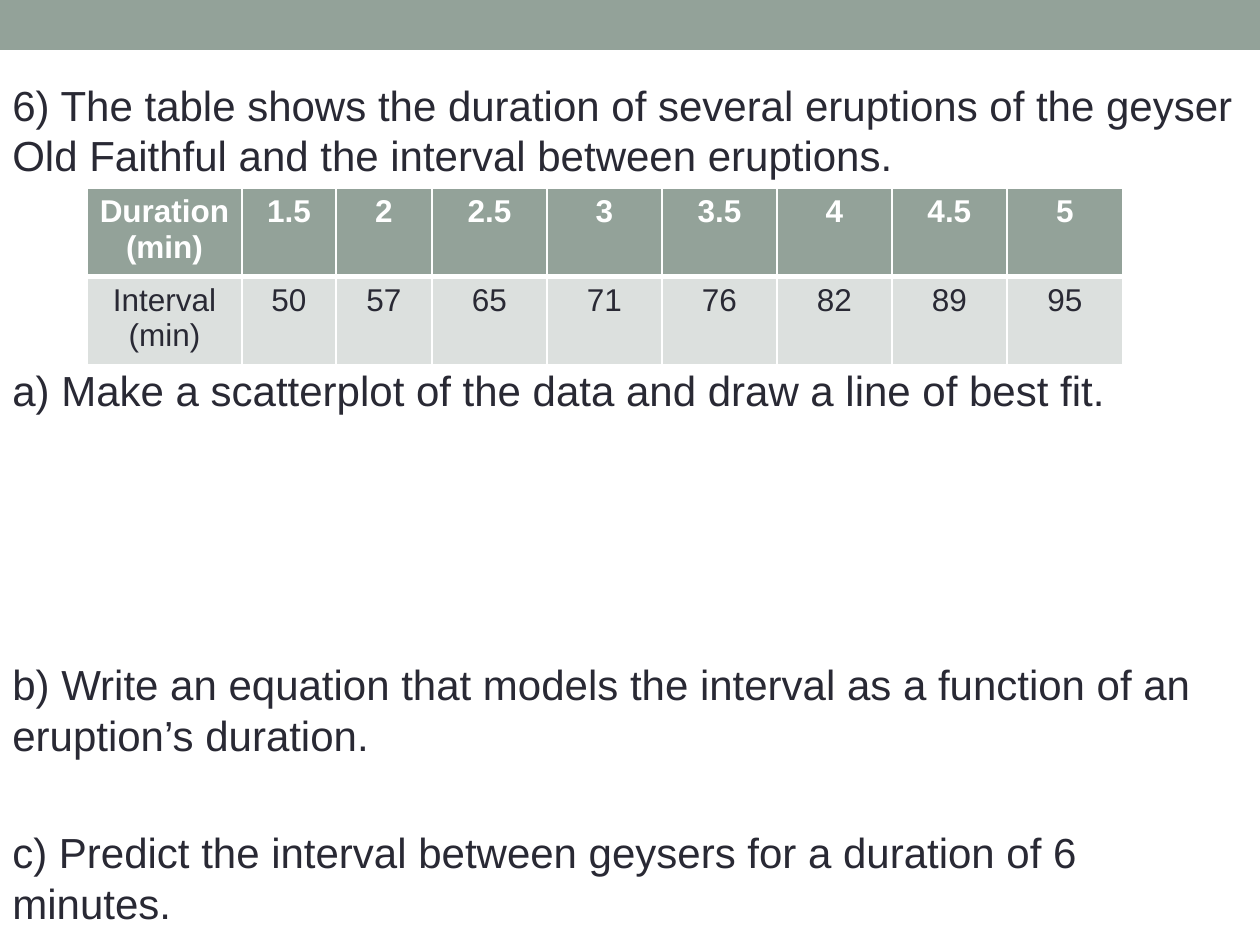
import pptx
import pptx.util
import pptx.dml.color
import pptx.enum.shapes
import pptx.enum.text
import pptx.oxml
import pptx.oxml.ns

SCALE = 914400 // 126
SAGE, PALE, INK, WHITE = "93A299", "DCE0DE", "292934", "FFFFFF"
MID = pptx.enum.text.PP_ALIGN.CENTER

TASKS = [
    ("6) The table shows the duration of several eruptions of the geyser Old Faithful and the interval between eruptions.", 0),
    ("a) Make a scatterplot of the data and draw a line of best fit.", 3),
    ("b) Write an equation that models the interval as a function of an eruption’s duration.", 4),
    ("c) Predict the interval between geysers for a duration of 6 minutes.", 1),
]
LINE, GAP = 28.8, 4.8
ROWS = [
    ["Duration (min)", "1.5", "2", "2.5", "3", "3.5", "4", "4.5", "5"],
    ["Interval\n(min)", "50", "57", "65", "71", "76", "82", "89", "95"],
]
COLS = [155, 94, 96] + [115] * 5 + [116]
HIGH = 82


def px(n):
    return pptx.util.Emu(n * SCALE)


def rgb(code):
    return pptx.dml.color.RGBColor.from_string(code)


def write(para, text, size=24, color=INK, bold=False, align=None, before=0, line=None):
    run = para.add_run()
    run.text = text
    font = run.font
    font.name, font.size, font.bold = "Arial", pptx.util.Pt(size), bold
    font.color.rgb = rgb(color)
    para.alignment = align
    para.space_before = pptx.util.Pt(before)
    if line:
        para.line_spacing = pptx.util.Pt(line)


def paras(frame, count):
    return [frame.paragraphs[0]] + [frame.add_paragraph() for _ in range(count - 1)]


def edge(cell, widths):
    props = cell._tc.get_or_add_tcPr()
    for i, (side, width) in enumerate(zip("LRTB", widths)):
        props.insert(i, pptx.oxml.parse_xml(
            f'<a:ln{side} {pptx.oxml.ns.nsdecls("a")} w="{width * 12700}"><a:solidFill>'
            f'<a:srgbClr val="{WHITE}"/></a:solidFill></a:ln{side}>'))


deck = pptx.Presentation()
deck.slide_width, deck.slide_height = px(1260), px(945)
slide = deck.slides.add_slide(deck.slide_layouts[6])

band = slide.shapes.add_shape(pptx.enum.shapes.MSO_SHAPE.RECTANGLE, 0, 0, px(1260), px(50))
band.shadow.inherit = False
band.fill.solid()
band.fill.fore_color.rgb = rgb(SAGE)
band.line.fill.background()

body = slide.shapes.add_textbox(0, px(73), px(1260), px(872)).text_frame
body.word_wrap = True
body.margin_right = px(20)
for para, (text, skip) in zip(paras(body, len(TASKS)), TASKS):
    before = skip * (LINE + GAP) + GAP if skip else 0
    write(para, text, before=before, line=LINE)

grid = slide.shapes.add_table(len(ROWS), len(COLS), px(87), px(188), px(sum(COLS)), px(HIGH * len(ROWS))).table
for col, wide in zip(grid.columns, COLS):
    col.width = px(wide)
for r, row in enumerate(ROWS):
    grid.rows[r].height = px(HIGH)
    head = r == 0
    for c, text in enumerate(row):
        cell = grid.cell(r, c)
        cell.fill.solid()
        cell.fill.fore_color.rgb = rgb(SAGE if head else PALE)
        edge(cell, (1, 1, 1, 3) if head else (1, 1, 3, 1))
        parts = text.split("\n")
        for para, part in zip(paras(cell.text_frame, len(parts)), parts):
            write(para, part, size=18, color=WHITE if head else INK, bold=head, align=MID)

deck.save("out.pptx")
